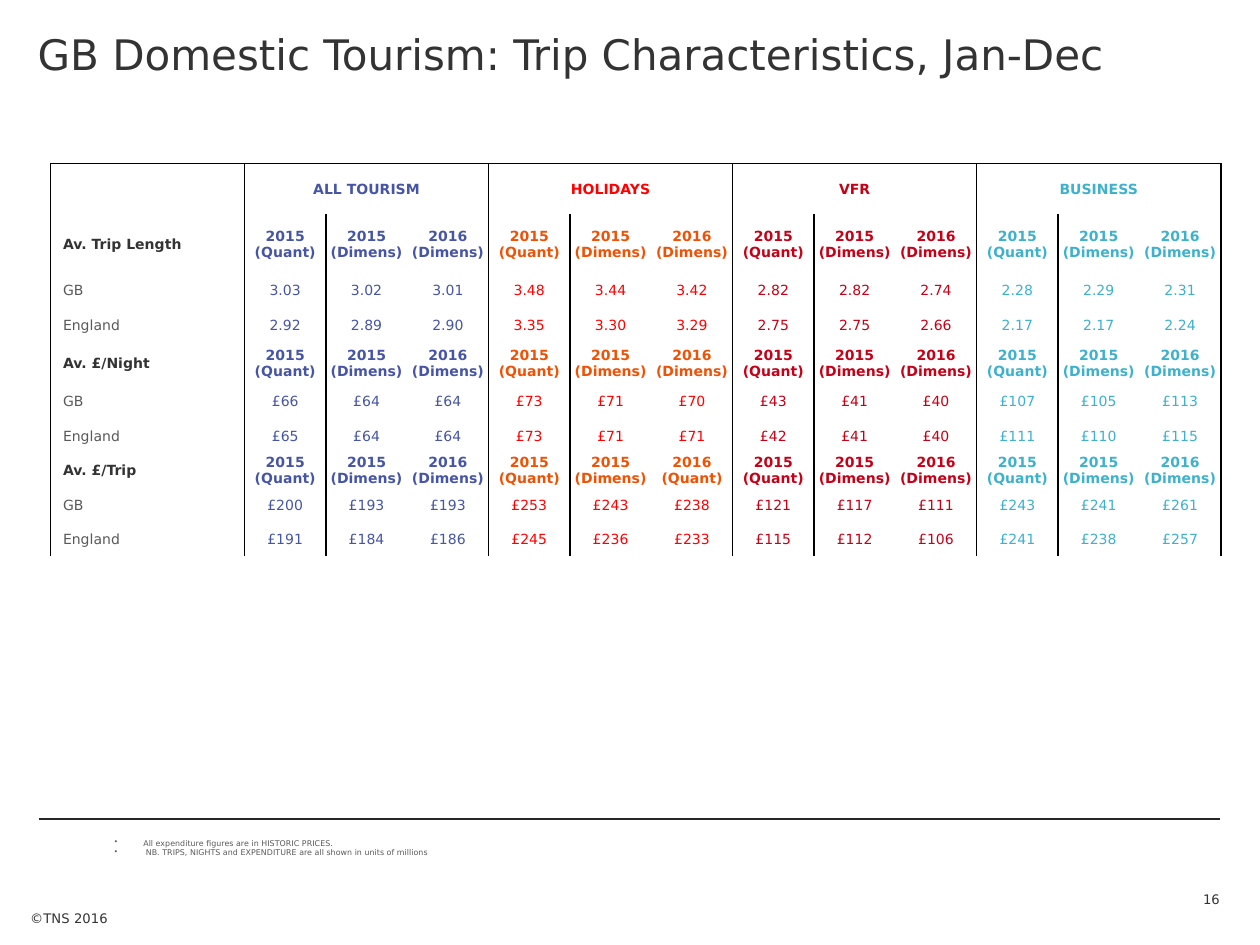
from dataclasses import dataclass

from lxml import etree
from pptx import Presentation
from pptx.dml.color import RGBColor
from pptx.enum import shapes, text
from pptx.oxml import ns
from pptx.util import Cm, Pt


@dataclass(frozen=True)
class Theme:
    font: str = "DejaVu Sans"
    ink: str = "333333"
    grey: str = "595959"
    rule: str = "262626"
    edge: str = "000000"
    title: float = 24
    cell: float = 8
    foot: float = 7.5
    note: float = 4.5


@dataclass(frozen=True)
class Group:
    name: str
    tint: str
    head: str  # colour of the year headings


@dataclass(frozen=True)
class Block:
    """One measure: its headings and the figures of both areas, by group."""
    name: str
    years: tuple
    areas: dict


@dataclass(frozen=True)
class Label:
    words: tuple
    box: tuple  # left, top, width, height in cm
    size: float
    tint: str
    pad: tuple = (0, 0, 0, 0)  # left, top, right, bottom in cm
    side: text.PP_ALIGN = text.PP_ALIGN.LEFT
    anchor: text.MSO_ANCHOR = text.MSO_ANCHOR.TOP
    hang: float = 0  # bullet indent in cm


THEME = Theme()
GROUPS = (
    Group("ALL TOURISM", "4655A5", "4655A5"),
    Group("HOLIDAYS", "FF0000", "EF5205"),
    Group("VFR", "C50017", "C50017"),
    Group("BUSINESS", "3EB1CC", "3EB1CC"),
)
YEARS = ("2015 (Quant)", "2015 (Dimens)", "2016 (Dimens)") * len(GROUPS)
MIXED = YEARS[:5] + ("2016 (Quant)",) + YEARS[6:]
BLOCKS = (
    Block("Av. Trip Length", YEARS, {
        "GB": "3.03 3.02 3.01 3.48 3.44 3.42 2.82 2.82 2.74 2.28 2.29 2.31",
        "England": "2.92 2.89 2.90 3.35 3.30 3.29 2.75 2.75 2.66 2.17 2.17 2.24",
    }),
    Block("Av. £/Night", YEARS, {
        "GB": "£66 £64 £64 £73 £71 £70 £43 £41 £40 £107 £105 £113",
        "England": "£65 £64 £64 £73 £71 £71 £42 £41 £40 £111 £110 £115",
    }),
    Block("Av. £/Trip", MIXED, {
        "GB": "£200 £193 £193 £253 £243 £238 £121 £117 £111 £243 £241 £261",
        "England": "£191 £184 £186 £245 £236 £233 £115 £112 £106 £241 £238 £257",
    }),
)
SPAN = 3
WIDTHS = [3.91] + [1.64] * SPAN * len(GROUPS)
HEIGHTS = [0.79, 1.19, 0.69, 0.69, 0.86] + [0.69] * 5

LABELS = (
    Label(("©TNS 2016",), (0.61, 17.93, 2.11, 0.74), THEME.foot, THEME.ink,
          anchor=text.MSO_ANCHOR.BOTTOM),
    Label(("16",), (23.19, 17.58, 1.4, 0.71), THEME.foot, THEME.ink,
          side=text.PP_ALIGN.RIGHT, anchor=text.MSO_ANCHOR.BOTTOM),
    Label(("GB Domestic Tourism: Trip Characteristics, Jan-Dec",),
          (0, 0, 25.4, 3.58), THEME.title, THEME.ink, pad=(0.76, 0.58, 0.76, 0)),
    Label(("All expenditure figures are in HISTORIC PRICES.",
           " NB. TRIPS, NIGHTS and EXPENDITURE are all shown in units of millions"),
          (2.06, 16.77, 22.5, 0.8), THEME.note, THEME.grey,
          pad=(0.25, 0.13, 0.25, 0.13), hang=0.58),
)


def assign(thing, values: dict) -> None:
    for key, value in values.items():
        setattr(thing, key, value)


def style(font, size: float, tint: str, bold: bool = False) -> None:
    assign(font, {"name": THEME.font, "size": Pt(size), "bold": bold})
    font.color.rgb = RGBColor.from_string(tint)


def pads(pad: tuple) -> dict:
    sides = ("left", "top", "right", "bottom")
    return {f"margin_{side}": Cm(gap) for side, gap in zip(sides, pad)}


def bullet(para, hang: float) -> None:
    props = para._p.get_or_add_pPr()
    props.set("marL", str(int(Cm(hang))))
    props.set("indent", str(-int(Cm(hang))))
    etree.SubElement(props, ns.qn("a:buChar"), char="•")


def draw_label(slide, label: Label) -> None:
    frame = slide.shapes.add_textbox(*map(Cm, label.box)).text_frame
    assign(frame, {"word_wrap": True, "vertical_anchor": label.anchor, **pads(label.pad)})
    for i, words in enumerate(label.words):
        para = frame.add_paragraph() if i else frame.paragraphs[0]
        para.alignment = label.side
        if label.hang:
            bullet(para, label.hang)
        run = para.add_run()
        run.text = words
        style(run.font, label.size, label.tint)


def draw_rule(slide) -> None:
    line = slide.shapes.add_connector(
        shapes.MSO_CONNECTOR.STRAIGHT, Cm(0.79), Cm(16.51), Cm(24.59), Cm(16.51))
    line.line.width = Pt(0.75)
    line.line.color.rgb = RGBColor.from_string(THEME.rule)
    etree.SubElement(line._element.spPr, ns.qn("a:effectLst"))


def frame_cell(cell, row: int, col: int) -> None:
    """Rule off the label column, each group and the table's top."""
    starts = col == 0 or col % SPAN == 1
    edges = {"lnL": starts, "lnR": col % SPAN == 0 or (row == 0 and starts), "lnT": row == 0}
    props = cell._tc.get_or_add_tcPr()
    for tag in (tag for tag, shown in edges.items() if shown):
        line = etree.SubElement(props, ns.qn(f"a:{tag}"), w=str(int(Pt(1))))
        fill = etree.SubElement(line, ns.qn("a:solidFill"))
        etree.SubElement(fill, ns.qn("a:srgbClr"), val=THEME.edge)
    cell.fill.background()


def fill_cell(cell, words: str, tint: str, bold: bool, label: bool) -> None:
    assign(cell, {"vertical_anchor": text.MSO_ANCHOR.MIDDLE,
                  **pads((0.25 if label else 0.03, 0.03, 0.03, 0))})
    para = cell.text_frame.paragraphs[0]
    para.alignment = text.PP_ALIGN.LEFT if label else text.PP_ALIGN.CENTER
    run = para.add_run()
    run.text = words
    style(run.font, THEME.cell, tint, bold)


def fill_row(table, row: int, name: str, values: tuple, bold: bool) -> None:
    fill_cell(table.cell(row, 0), name, THEME.ink if bold else THEME.grey, bold, True)
    for i, value in enumerate(values):
        group = GROUPS[i // SPAN]
        tint = group.head if bold else group.tint
        fill_cell(table.cell(row, i + 1), value, tint, bold, False)


def draw_table(slide) -> None:
    table = slide.shapes.add_table(
        len(HEIGHTS), len(WIDTHS), Cm(1.02), Cm(3.3),
        Cm(sum(WIDTHS)), Cm(sum(HEIGHTS))).table
    assign(table, {"first_row": False, "horz_banding": False})
    plain = "{2D5ABB26-0587-4C30-8999-92F81FD0307C}"  # no style, no grid
    table._tbl.tblPr.find(ns.qn("a:tableStyleId")).text = plain
    for col, width in zip(table.columns, WIDTHS):
        col.width = Cm(width)
    for row, height in zip(table.rows, HEIGHTS):
        row.height = Cm(height)
    for r in range(len(HEIGHTS)):
        for c in range(len(WIDTHS)):
            frame_cell(table.cell(r, c), r, c)

    for i, group in enumerate(GROUPS):
        first = table.cell(0, 1 + i * SPAN)
        first.merge(table.cell(0, (i + 1) * SPAN))
        fill_cell(first, group.name, group.tint, True, False)
    row = 1
    for block in BLOCKS:
        fill_row(table, row, block.name, block.years, True)
        for step, (area, values) in enumerate(block.areas.items(), 1):
            fill_row(table, row + step, area, tuple(values.split()), False)
        row += 1 + len(block.areas)


def main() -> None:
    deck = Presentation()
    assign(deck, {"slide_width": Cm(25.4), "slide_height": Cm(19.05)})
    slide = deck.slides.add_slide(deck.slide_layouts[6])
    draw_rule(slide)
    for label in LABELS:
        draw_label(slide, label)
    draw_table(slide)
    deck.save("out.pptx")


if __name__ == "__main__":
    main()
